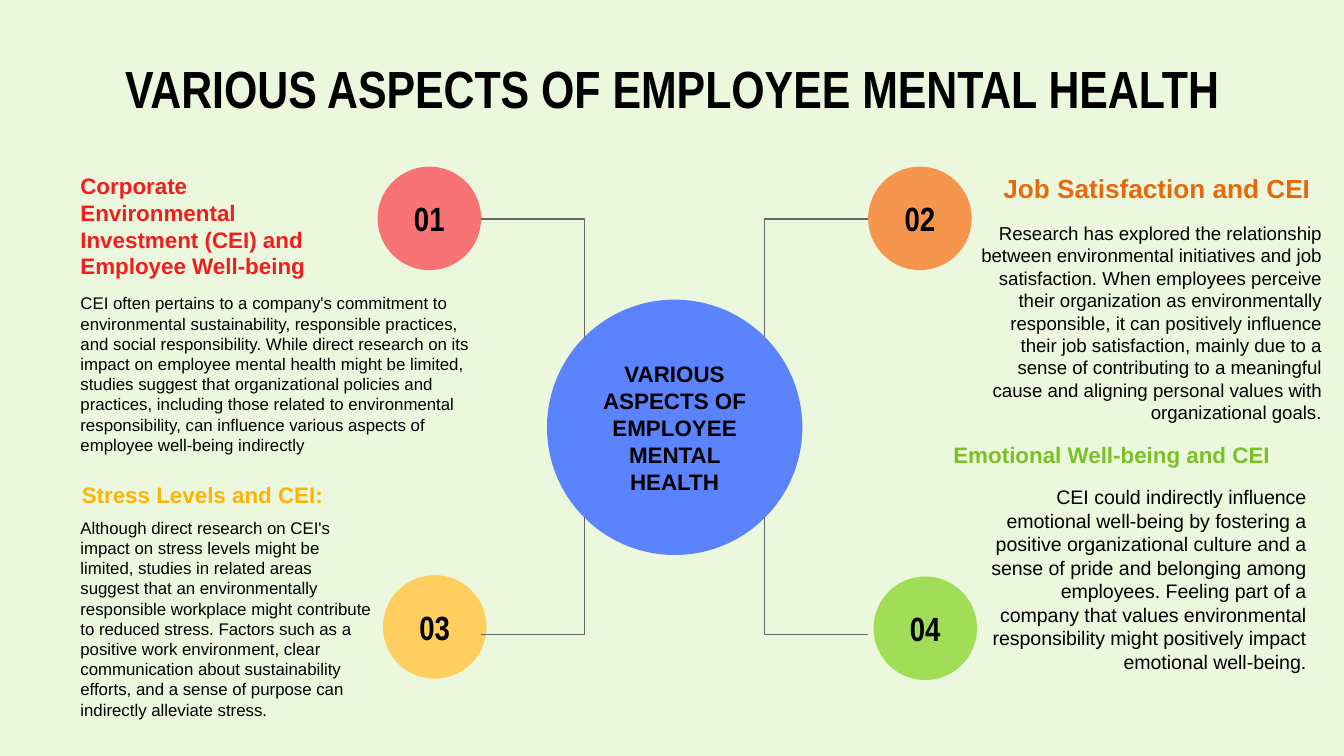
from dataclasses import dataclass

from lxml import etree
from pptx import Presentation
from pptx.dml.color import RGBColor
from pptx.enum.shapes import MSO_CONNECTOR as Connector, MSO_SHAPE as Shape
from pptx.enum.text import MSO_ANCHOR as Anchor, PP_ALIGN as Align
from pptx.oxml.ns import qn
from pptx.util import Inches, Pt

BACKGROUND = RGBColor(0xEC, 0xF8, 0xDD)
BLACK = RGBColor(0x00, 0x00, 0x00)
GRAY = RGBColor(0x66, 0x66, 0x66)
BLUE = RGBColor(0x5C, 0x83, 0xFE)
RED, CORAL = RGBColor(0xF4, 0x1D, 0x1E), RGBColor(0xF8, 0x73, 0x74)
RUST, ORANGE = RGBColor(0xE7, 0x69, 0x0C), RGBColor(0xF6, 0x95, 0x4E)
AMBER, YELLOW = RGBColor(0xFF, 0xB3, 0x07), RGBColor(0xFF, 0xCE, 0x5F)
GREEN, LIME = RGBColor(0x7C, 0xC0, 0x27), RGBColor(0xA1, 0xDD, 0x56)

TITLE = "VARIOUS ASPECTS OF EMPLOYEE MENTAL HEALTH"
BADGE_SIZE = 0.77


@dataclass
class Aspect:
    """Boxes are left, top, width, height; the parts are relative to the origin."""
    number: str
    heading: str
    body: str
    heading_color: RGBColor
    badge_color: RGBColor
    align: Align
    origin: tuple
    heading_box: tuple
    body_box: tuple
    badge_at: tuple
    heading_size: float
    body_size: float


ASPECTS = [
    Aspect("01", "Corporate Environmental Investment (CEI) and Employee Well-being",
           "CEI often pertains to a company's commitment to environmental sustainability, "
           "responsible practices, and social responsibility. While direct research on its "
           "impact on employee mental health might be limited, studies suggest that "
           "organizational policies and practices, including those related to environmental "
           "responsibility, can influence various aspects of employee well-being indirectly",
           RED, CORAL, Align.LEFT, (0.5, 1.18),
           (0, 0, 2.14, 0.36), (0, 0.9, 3.09, 1.02), (2.31, 0.06), 12, 9),
    Aspect("02", "Job Satisfaction and CEI",
           "Research has explored the relationship between environmental initiatives and job "
           "satisfaction. When employees perceive their organization as environmentally "
           "responsible, it can positively influence their job satisfaction, mainly due to a "
           "sense of contributing to a meaningful cause and aligning personal values with "
           "organizational goals.",
           RUST, ORANGE, Align.RIGHT, (6.46, 1.18),
           (0.9, 0, 2.49, 0.36), (0.7, 0.37, 2.77, 0.53), (0, 0.06), 14, 10),
    Aspect("03", "Stress Levels and CEI:",
           "Although direct research on CEI's impact on stress levels might be limited, "
           "studies in related areas suggest that an environmentally responsible workplace "
           "might contribute to reduced stress. Factors such as a positive work environment, "
           "clear communication about sustainability efforts, and a sense of purpose can "
           "indirectly alleviate stress.",
           AMBER, YELLOW, Align.LEFT, (0.5, 3.48),
           (0.01, 0, 2.38, 0.36), (0, 0.27, 2.36, 0.53), (2.35, 0.8), 12, 9),
    Aspect("04", "Emotional Well-being and CEI",
           "CEI could indirectly influence emotional well-being by fostering a positive "
           "organizational culture and a sense of pride and belonging among employees. "
           "Feeling part of a company that values environmental responsibility might "
           "positively impact emotional well-being.",
           GREEN, LIME, Align.RIGHT, (6.5, 3.18),
           (0.35, 0, 2.7, 0.36), (0.73, 0.33, 2.59, 0.53), (0, 1.11), 12, 10.5),
]


def write(shape, text, size, color=BLACK, align=Align.CENTER, font="Arial",
          bold=True, anchor=Anchor.MIDDLE):
    frame = shape.text_frame
    frame.word_wrap = True
    frame.vertical_anchor = anchor
    frame.margin_left = frame.margin_right = Inches(0.1)
    frame.margin_top = frame.margin_bottom = Inches(0.1)
    paragraph = frame.paragraphs[0]
    paragraph.alignment = align
    run = paragraph.add_run()
    run.text = text
    run.font.name, run.font.size, run.font.bold = font, Pt(size), bold
    run.font.color.rgb = color


def add_text(slide, box, text, size, **style):
    write(slide.shapes.add_textbox(*map(Inches, box)), text, size, **style)


def add_circle(slide, left, top, size, fill):
    circle = slide.shapes.add_shape(Shape.OVAL, *map(Inches, (left, top, size, size)))
    circle.shadow.inherit = False
    circle.fill.solid()
    circle.fill.fore_color.rgb = fill
    circle.line.fill.background()
    return circle


def add_elbow(slide, begin, end):
    """One-corner connector: runs sideways first, then up or down."""
    elbow = slide.shapes.add_connector(Connector.ELBOW, *map(Inches, begin + end))
    elbow.line.color.rgb = GRAY
    elbow.line.width = Pt(0.75)
    properties = elbow._element.spPr
    properties.find(qn("a:prstGeom")).set("prst", "bentConnector2")
    etree.SubElement(properties, qn("a:effectLst"))


def add_aspect(slide, aspect):
    left, top = aspect.origin

    def place(box):
        return (left + box[0], top + box[1], *box[2:])

    add_text(slide, place(aspect.heading_box), aspect.heading, aspect.heading_size,
             color=aspect.heading_color, align=aspect.align, anchor=Anchor.TOP)
    add_text(slide, place(aspect.body_box), aspect.body, aspect.body_size,
             align=aspect.align, bold=False, anchor=Anchor.TOP)
    badge = add_circle(slide, *place(aspect.badge_at), BADGE_SIZE, aspect.badge_color)
    write(badge, aspect.number, 18, font="Arial Narrow")


def add_hub(slide, left, top, size):
    write(add_circle(slide, left, top, size, BLUE), TITLE, 12)
    # Elbows between the badges and the circle's edge
    center_x, center_y = left + size / 2, top + size / 2
    for side in (-1, 1):
        for outer_y, inner_y in ((1.63, center_y - 0.67), (4.72, center_y + 0.67)):
            add_elbow(slide, (center_x + side * 1.44, outer_y),
                      (center_x + side * 0.67, inner_y))


def main():
    presentation = Presentation()
    # Widescreen, 16:9
    presentation.slide_width = Inches(10)
    presentation.slide_height = Inches(10) * 9 // 16
    slide = presentation.slides.add_slide(presentation.slide_layouts[6])
    slide.background.fill.solid()
    slide.background.fill.fore_color.rgb = BACKGROUND

    # Title
    add_text(slide, (0.5, 0.45, 9, 0.41), TITLE, 28, font="Arial Narrow")
    # Four aspects around the hub
    for aspect in ASPECTS:
        add_aspect(slide, aspect)
    add_hub(slide, 4.07, 2.23, 1.9)

    presentation.save("out.pptx")


if __name__ == "__main__":
    main()
